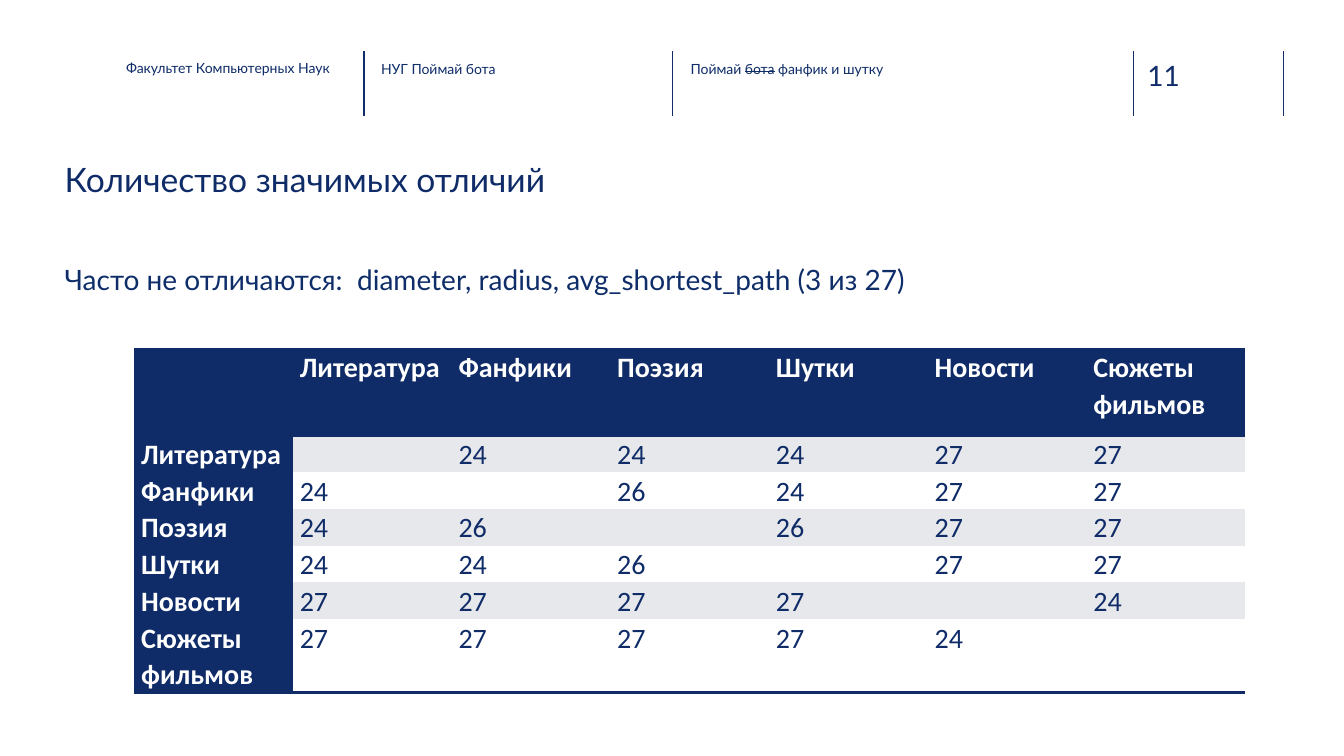
from dataclasses import dataclass

from pptx import Presentation
from pptx.dml.color import RGBColor
from pptx.enum.shapes import MSO_CONNECTOR
from pptx.enum.text import MSO_ANCHOR, MSO_AUTO_SIZE, PP_ALIGN
from pptx.oxml import parse_xml
from pptx.oxml.ns import nsdecls, qn
from pptx.util import Inches, Pt

STRAIGHT = MSO_CONNECTOR.STRAIGHT
TOP = MSO_ANCHOR.TOP
FIXED = MSO_AUTO_SIZE.NONE
LEFT = PP_ALIGN.LEFT
PLAIN = "{2D5ABB26-0587-4C30-8999-92F81FD0307C}"


@dataclass(frozen=True)
class Theme:
    """Colours, fonts and type sizes."""
    rule: str = "102D69"
    head: str = "0F2C68"
    text: str = "0E2D69"
    band: str = "E7E8EB"
    white: str = "FFFFFF"
    font: str = "Lato"
    grid: str = "Calibri"
    small: int = 10
    body: int = 20
    title: int = 24


class Page:
    """Draws elements on one slide in one theme."""

    def __init__(self, slide, theme):
        self.slide = slide
        self.theme = theme

    def run(self, para, text, size, color, font=None, bold=False, strike=False):
        run = para.add_run()
        run.text = text
        run.font.name = font or self.theme.font
        run.font.size = Pt(size)
        run.font.bold = bold
        run.font.color.rgb = RGBColor.from_string(color)
        if strike:
            run.font._element.set("strike", "sngStrike")

    def fill(self, shape, box, parts, size, color):
        shape.left, shape.top, shape.width, shape.height = map(Inches, box)
        frame = shape.text_frame
        frame.word_wrap = True
        frame.auto_size = FIXED
        frame.vertical_anchor = TOP
        frame.margin_left = frame.margin_right = 0
        frame.margin_top = frame.margin_bottom = 0
        para = frame.paragraphs[0]
        para.alignment = LEFT
        for text, strike in parts:
            self.run(para, text, size, color, strike=strike)

    def title(self, box, text):
        self.fill(self.slide.shapes.title, box, [(text, False)],
                  self.theme.title, self.theme.head)

    def text(self, box, parts, size, color):
        shape = self.slide.shapes.add_textbox(*map(Inches, box))
        self.fill(shape, box, parts, size, color)

    def rule(self, x, top, bottom):
        line = self.slide.shapes.add_connector(
            STRAIGHT, Inches(x), Inches(top), Inches(x), Inches(bottom))
        line.line.color.rgb = RGBColor.from_string(self.theme.rule)
        line.line.width = Pt(1)
        line.element.spPr.append(parse_xml(f"<a:effectLst {nsdecls('a')}/>"))

    def edge(self, cell, side):
        cell._tc.get_or_add_tcPr().append(parse_xml(
            f'<a:{side} {nsdecls("a")} w="{Pt(2)}"><a:solidFill>'
            f'<a:srgbClr val="{self.theme.head}"/></a:solidFill></a:{side}>'))

    def cell(self, cell, text, fill, color, bold):
        cell.margin_left = cell.margin_right = Inches(0.07)
        cell.margin_top = cell.margin_bottom = 0
        cell.fill.solid()
        cell.fill.fore_color.rgb = RGBColor.from_string(fill)
        para = cell.text_frame.paragraphs[0]
        para.line_spacing = 1.07
        para.space_after = Pt(8)
        if text:
            self.run(para, text, self.theme.body, color, self.theme.grid, bold)

    def table(self, box, rows, heights):
        theme = self.theme
        frame = self.slide.shapes.add_table(
            len(rows), len(rows[0]), *map(Inches, box))
        for style in frame.element.iter(qn("a:tableStyleId")):
            style.text = PLAIN
        table = frame.table
        table.horz_banding = False
        for col in table.columns:
            col.width = Inches(box[2] / len(rows[0]))
        for r, (row, height) in enumerate(zip(rows, heights)):
            table.rows[r].height = Inches(height)
            for c, text in enumerate(row):
                cell = table.cell(r, c)
                if r == 0:
                    self.edge(cell, "lnT")
                if r in (0, len(rows) - 1):
                    self.edge(cell, "lnB")
                head = r == 0 or c == 0
                band = theme.band if r % 2 else theme.white
                self.cell(cell, text, theme.head if head else band,
                          theme.white if head else theme.head, head)


def main():
    deck = Presentation()
    deck.slide_width, deck.slide_height = Inches(13.33), Inches(7.5)
    theme = Theme()
    page = Page(deck.slides.add_slide(deck.slide_layouts[5]), theme)

    for x in (3.61, 6.67, 11.24, 12.73):
        page.rule(x, 0.51, 1.15)
    page.text((11.38, 0.58, 0.73, 0.34), [("11", False)], theme.body, theme.rule)
    page.text((1.25, 0.59, 2.08, 0.45), [("Факультет Компьютерных Наук", False)],
              theme.small, theme.head)
    page.text((3.78, 0.6, 2.26, 0.45), [("НУГ Поймай бота", False)],
              theme.small, theme.text)
    page.text((6.85, 0.6, 2.26, 0.45),
              [("Поймай ", False), ("бота", True), (" фанфик и шутку", False)],
              theme.small, theme.text)

    page.title((0.64, 1.58, 12.09, 0.85), "Количество значимых отличий")
    page.text((0.64, 2.6, 12.09, 4.1),
              [("Часто не отличаются:  diameter, radius, "
                "avg_shortest_path (3 из 27)", False)],
              theme.body, theme.text)

    counts = {
        "Литература": ["", "24", "24", "24", "27", "27"],
        "Фанфики": ["24", "", "26", "24", "27", "27"],
        "Поэзия": ["24", "26", "", "26", "27", "27"],
        "Шутки": ["24", "24", "26", "", "27", "27"],
        "Новости": ["27", "27", "27", "27", "", "24"],
        "Сюжеты фильмов": ["27", "27", "27", "27", "24", ""],
    }
    rows = [["", *counts]] + [[name, *vals] for name, vals in counts.items()]
    page.table((1.33, 3.46, 11.02, 3.4), rows, [0.86] + [0.36] * 5 + [0.73])

    deck.save("out.pptx")


if __name__ == "__main__":
    main()
